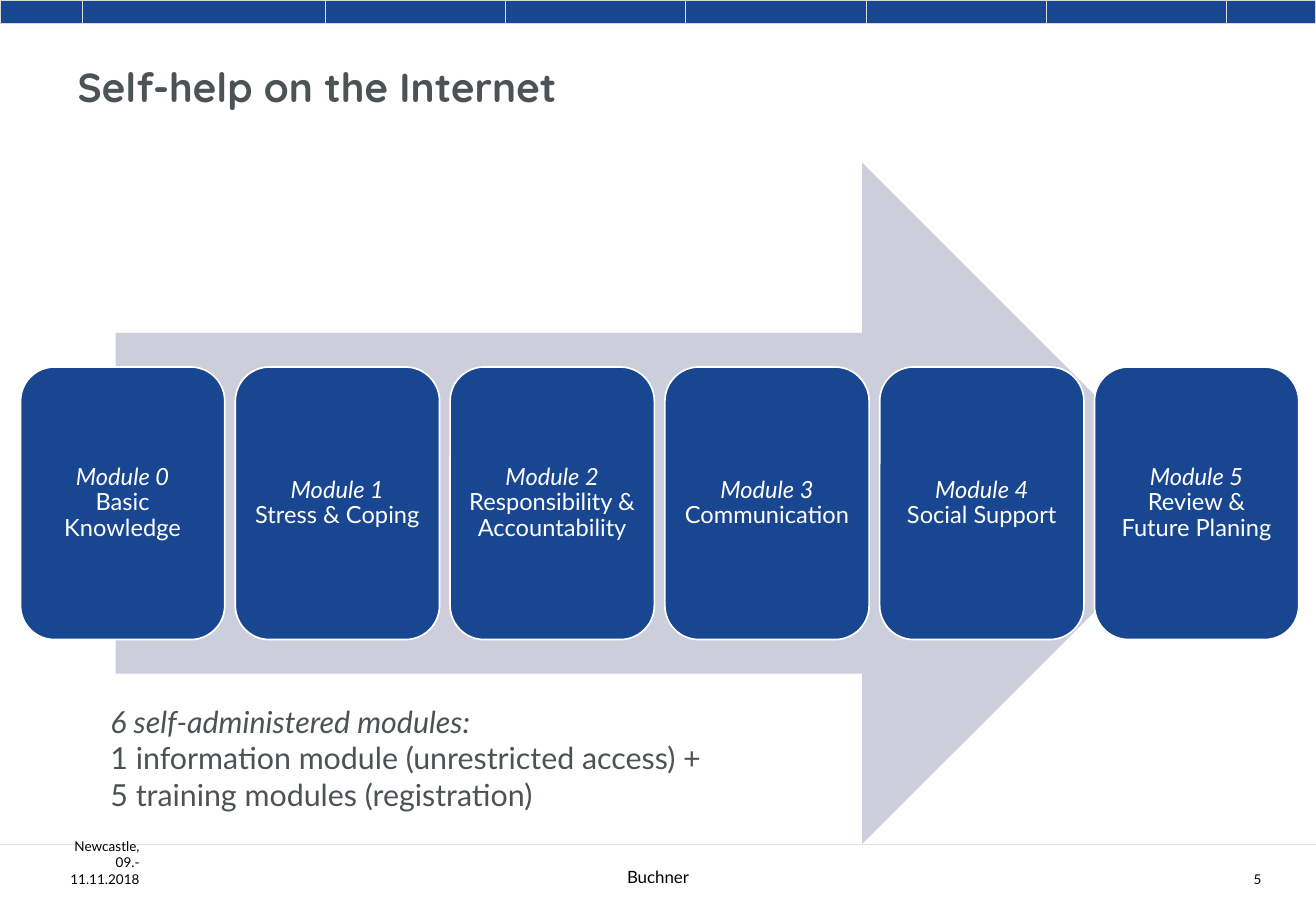
import copy

import pptx
import pptx.util
import pptx.dml.color
import pptx.enum.shapes
import pptx.enum.text
from lxml import etree
from pptx.oxml.ns import qn

Cm = pptx.util.Cm
Pt = pptx.util.Pt
SHAPE = pptx.enum.shapes.MSO_SHAPE
ALIGN = pptx.enum.text.PP_ALIGN
ANCHOR = pptx.enum.text.MSO_ANCHOR

COLORS = {
    "blue": "184690",
    "band_edge": "D9D9D9",
    "rule": "E3E4E5",
    "arrow": "CCCFDB",
    "white": "FFFFFF",
    "text": "4C5355",
    "black": "000000",
}
SLIDE_WIDTH, SLIDE_HEIGHT = 27.51, 19.05
MODULES = [
    "Basic Knowledge",
    "Stress & Coping",
    "Responsibility & Accountability",
    "Communication",
    "Social Support",
    "Review & Future Planing",
]


def color(name):
    return pptx.dml.color.RGBColor.from_string(COLORS[name])


def add_filled(slide, kind, box, fill, edge=None, edge_width=0.5):
    outline = slide.shapes.add_shape(kind, *map(Cm, box))
    outline.shadow.inherit = False
    outline.fill.solid()
    outline.fill.fore_color.rgb = color(fill)
    if edge:
        outline.line.color.rgb = color(edge)
        outline.line.width = Pt(edge_width)
    else:
        outline.line.fill.background()
    return outline


def write(frame, text, size, ink, align=ALIGN.LEFT, anchor=ANCHOR.TOP,
          font="Lato", bold=False, italic_lead=False):
    frame.word_wrap = True
    frame.vertical_anchor = anchor
    paragraph = frame.paragraphs[0]
    paragraph.text = text
    paragraph.alignment = align
    for index, run in enumerate(paragraph.runs):
        run.font.name = font
        run.font.size = Pt(size)
        run.font.bold = bold
        run.font.italic = italic_lead and index == 0
        run.font.color.rgb = color(ink)
    for line_break in paragraph._p.findall(qn("a:br")):
        line_break.append(copy.deepcopy(paragraph.runs[0]._r.rPr))
    return paragraph


def add_header_band(slide, left, top, width, height):
    step, first_left, segment_width = 3.77, 1.14, 5.66
    for index in reversed(range(7)):
        offset = first_left + step * index
        segment = (left + offset, top, min(segment_width, width - offset), height)
        add_filled(slide, SHAPE.RECTANGLE, segment, "blue", "band_edge")
    add_filled(slide, SHAPE.RECTANGLE, (left, top, 1.73, height), "blue", "band_edge")


def add_title(slide, left, top, width, height):
    title = slide.shapes.title
    title.left, title.top, title.width, title.height = map(Cm, (left, top, width, height))
    title.text_frame.auto_size = pptx.enum.text.MSO_AUTO_SIZE.NONE
    write(title.text_frame, "Self-help on the Internet", 24, "text",
          anchor=ANCHOR.MIDDLE, font="Quicksand", bold=True)


def add_footer(slide, left, top, width, height):
    rule = slide.shapes.add_connector(
        pptx.enum.shapes.MSO_CONNECTOR.STRAIGHT,
        Cm(left), Cm(top), Cm(left + width), Cm(top))
    rule.line.color.rgb = color("rule")
    rule.line.width = Pt(0.5)
    etree.SubElement(rule._element.spPr, qn("a:effectLst"))
    entries = [
        ("Newcastle, 09.-11.11.2018", 0.91, 2.26, 8, ALIGN.RIGHT),
        ("Buchner", 4.93, 17.65, 10, ALIGN.CENTER),
        ("5", 24.36, 2.26, 8, ALIGN.RIGHT),
    ]
    for text, offset, entry_width, size, align in entries:
        entry = slide.shapes.add_textbox(
            Cm(left + offset), Cm(top), Cm(entry_width), Cm(height))
        write(entry.text_frame, text, size, "black", align, ANCHOR.BOTTOM)


def add_module_process(slide, left, top, width, height):
    add_filled(slide, SHAPE.RIGHT_ARROW,
               (left + 1.99, top, 22.73, height), "arrow")
    card_width, card_height = 4.27, 0.4 * height
    step = (width - card_width) / (len(MODULES) - 1)
    card_top = top + (height - card_height) / 2
    for number, topic in enumerate(MODULES):
        card = add_filled(slide, SHAPE.ROUNDED_RECTANGLE,
                          (left + number * step, card_top, card_width, card_height),
                          "blue", "white", 1)
        frame = card.text_frame
        frame.margin_left = frame.margin_right = Cm(0.15)
        frame.margin_top = frame.margin_bottom = Cm(0.15)
        label = write(frame, f"Module {number}\v{topic}", 14, "white",
                      ALIGN.CENTER, ANCHOR.MIDDLE, italic_lead=True)
        label.line_spacing = 0.9


def add_summary(slide, left, top, width, height):
    summary = slide.shapes.add_textbox(Cm(left), Cm(top), Cm(width), Cm(height))
    write(summary.text_frame,
          "6 self-administered modules:\v"
          "1 information module (unrestricted access) +\v"
          "5 training modules (registration)",
          18, "text", italic_lead=True)


def main():
    deck = pptx.Presentation()
    deck.slide_width, deck.slide_height = Cm(SLIDE_WIDTH), Cm(SLIDE_HEIGHT)
    slide = deck.slides.add_slide(deck.slide_layouts[5])
    add_header_band(slide, 0, 0, SLIDE_WIDTH, 0.5)
    add_title(slide, 1.37, 0.43, 24.77, 2.74)
    add_footer(slide, 0, 17.65, SLIDE_WIDTH, 1.02)
    add_module_process(slide, 0.43, 3.4, 26.72, 14.25)
    add_summary(slide, 2.06, 14.58, 13.77, 2.57)
    deck.save("out.pptx")


if __name__ == "__main__":
    main()
